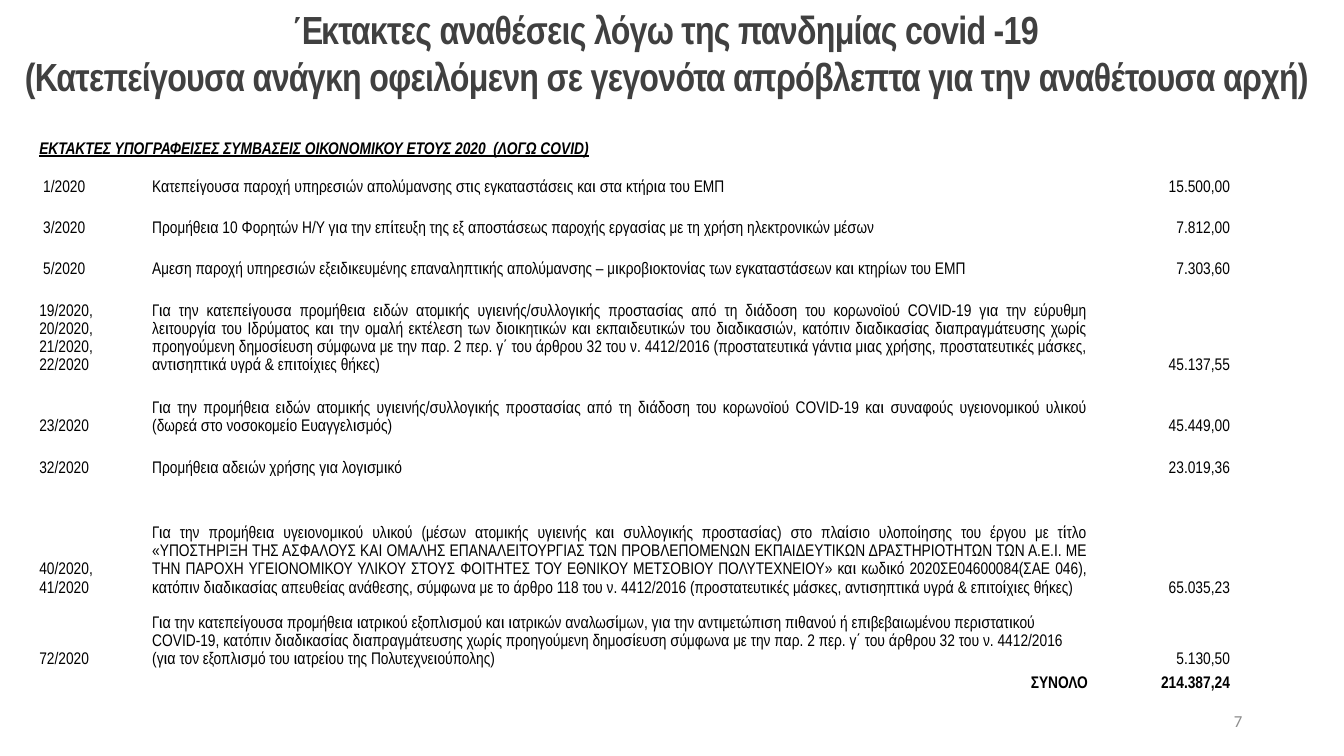
from pptx import Presentation
from pptx.dml.color import RGBColor
from pptx.enum.text import MSO_ANCHOR, PP_ALIGN
from pptx.util import Inches, Pt

LEFT, RIGHT, MID, JUST = PP_ALIGN.LEFT, PP_ALIGN.RIGHT, PP_ALIGN.CENTER, PP_ALIGN.JUSTIFY
WIDTHS = [1.12, 1.74, 7.56, 1.41]
HEIGHTS = [0.61, 0.24, 0.41, 0.41, 0.95, 0.61, 0.41, 1.19, 0.71, 0.24]
TITLE = [
    "Έκτακτες αναθέσεις λόγω της πανδημίας covid -19",
    "(Κατεπείγουσα ανάγκη οφειλόμενη σε γεγονότα απρόβλεπτα για την αναθέτουσα αρχή)",
]
HEADING = "EKTAKTEΣ ΥΠΟΓΡΑΦΕΙΣΕΣ ΣΥΜΒΑΣΕΙΣ ΟΙΚΟΝΟΜΙΚΟΥ ΕΤΟΥΣ 2020  (ΛΟΓΩ COVID)"
# Contract numbers, subject, alignment of the subject, amount
DEALS = [
    (" 1/2020",
     "Κατεπείγουσα παροχή υπηρεσιών απολύμανσης στις εγκαταστάσεις και στα κτήρια του ΕΜΠ",
     JUST, "15.500,00"),
    (" 3/2020",
     "Προμήθεια 10 Φορητών Η/Υ για την επίτευξη της εξ αποστάσεως παροχής εργασίας "
     "με τη χρήση ηλεκτρονικών μέσων",
     JUST, "7.812,00"),
    (" 5/2020",
     "Αμεση παροχή υπηρεσιών εξειδικευμένης επαναληπτικής απολύμανσης – μικροβιοκτονίας "
     "των εγκαταστάσεων και κτηρίων του ΕΜΠ",
     JUST, "7.303,60"),
    ("19/2020,\n20/2020,\n21/2020,\n22/2020",
     "Για την κατεπείγουσα προμήθεια ειδών ατομικής υγιεινής/συλλογικής προστασίας από τη "
     "διάδοση του κορωνοϊού COVID-19 για την εύρυθμη λειτουργία του Ιδρύματος και την ομαλή "
     "εκτέλεση των διοικητικών και εκπαιδευτικών του διαδικασιών, κατόπιν διαδικασίας "
     "διαπραγμάτευσης χωρίς προηγούμενη δημοσίευση σύμφωνα με την παρ. 2 περ. γ΄ του άρθρου "
     "32 του ν. 4412/2016 (προστατευτικά γάντια μιας χρήσης, προστατευτικές μάσκες, "
     "αντισηπτικά υγρά & επιτοίχιες θήκες)",
     JUST, "45.137,55"),
    ("23/2020",
     "Για την προμήθεια ειδών ατομικής υγιεινής/συλλογικής προστασίας από τη διάδοση του "
     "κορωνοϊού COVID-19 και συναφούς υγειονομικού υλικού (δωρεά στο νοσοκομείο Ευαγγελισμός)",
     JUST, "45.449,00"),
    ("32/2020", "Προμήθεια αδειών χρήσης για λογισμικό", LEFT, "23.019,36"),
    ("40/2020,\n41/2020",
     "Για την προμήθεια υγειονομικού υλικού (μέσων ατομικής υγιεινής και συλλογικής "
     "προστασίας) στο πλαίσιο υλοποίησης του έργου με τίτλο «ΥΠΟΣΤΗΡΙΞΗ ΤΗΣ ΑΣΦΑΛΟΥΣ ΚΑΙ "
     "ΟΜΑΛΗΣ ΕΠΑΝΑΛΕΙΤΟΥΡΓΙΑΣ ΤΩΝ ΠΡΟΒΛΕΠΟΜΕΝΩΝ ΕΚΠΑΙΔΕΥΤΙΚΩΝ ΔΡΑΣΤΗΡΙΟΤΗΤΩΝ ΤΩΝ Α.Ε.Ι. "
     "ΜΕ ΤΗΝ ΠΑΡΟΧΗ ΥΓΕΙΟΝΟΜΙΚΟΥ ΥΛΙΚΟΥ ΣΤΟΥΣ ΦΟΙΤΗΤΕΣ ΤΟΥ EΘΝΙΚΟΥ ΜΕΤΣΟΒΙΟΥ "
     "ΠΟΛΥΤΕΧΝΕΙΟΥ» και κωδικό 2020ΣΕ04600084(ΣΑΕ 046), κατόπιν διαδικασίας απευθείας "
     "ανάθεσης, σύμφωνα με το άρθρο 118 του ν. 4412/2016 (προστατευτικές μάσκες, "
     "αντισηπτικά υγρά & επιτοίχιες θήκες)",
     JUST, "65.035,23"),
    ("72/2020",
     "Για την κατεπείγουσα προμήθεια ιατρικού εξοπλισμού και ιατρικών αναλωσίμων, για την "
     "αντιμετώπιση πιθανού ή επιβεβαιωμένου περιστατικού COVID-19, κατόπιν διαδικασίας "
     "διαπραγμάτευσης χωρίς προηγούμενη δημοσίευση σύμφωνα με την παρ. 2 περ. γ΄ του άρθρου "
     "32 του ν. 4412/2016 (για τον εξοπλισμό του ιατρείου της Πολυτεχνειούπολης)",
     LEFT, "5.130,50"),
]


def color(code):
    return RGBColor.from_string(code)


def style(para, size, code, align, face="Arial Narrow", bold=False):
    para.alignment = align
    font = para.font
    font.name, font.size, font.bold = face, Pt(size), bold
    font.color.rgb = color(code)


def add_text(slide, lines, box, anchor, *look):
    frame = slide.shapes.add_textbox(*map(Inches, box)).text_frame
    frame.word_wrap = True
    frame.vertical_anchor = anchor
    frame.text = "\n".join(lines)
    for para in frame.paragraphs:
        style(para, *look)
    return frame


def add_title(slide):
    frame = add_text(slide, TITLE, (0, 0, 13.22, 1.11), MSO_ANCHOR.TOP,
                     28, "404040", MID, "Arial Narrow", True)
    for para in frame.paragraphs:
        for run in para.runs:
            run.font._element.set("spc", "-50")


def fill_cell(cell, text, align=LEFT, bold=False):
    cell.text = text
    cell.vertical_anchor = MSO_ANCHOR.BOTTOM
    cell.margin_left = cell.margin_right = cell.margin_top = Inches(0.01)
    cell.margin_bottom = 0
    for para in cell.text_frame.paragraphs:
        style(para, 12, "000000", align, bold=bold)
        para.line_spacing = 1.15


def add_deals(slide):
    frame = slide.shapes.add_table(
        len(HEIGHTS), len(WIDTHS), Inches(0.38), Inches(1.09),
        Inches(sum(WIDTHS)), Inches(sum(HEIGHTS)))
    table = frame.table
    table.first_row = table.horz_banding = False
    for col, width in zip(table.columns, WIDTHS):
        col.width = Inches(width)
    for row, height in zip(table.rows, HEIGHTS):
        row.height = Inches(height)
    for cell in table.iter_cells():
        cell.fill.solid()
        cell.fill.fore_color.rgb = color("FFFFFF")
        fill_cell(cell, "")

    head = table.cell(0, 0)
    head.merge(table.cell(0, 3))
    fill_cell(head, HEADING, bold=True)
    head.vertical_anchor = MSO_ANCHOR.MIDDLE
    head.margin_top = Inches(0.17)
    font = head.text_frame.paragraphs[0].font
    font.italic = font.underline = True

    for row, (number, subject, align, amount) in enumerate(DEALS, 1):
        table.cell(row, 1).merge(table.cell(row, 2))
        fill_cell(table.cell(row, 0), number)
        fill_cell(table.cell(row, 1), subject, align)
        fill_cell(table.cell(row, 3), amount, RIGHT)

    last = len(HEIGHTS) - 1
    fill_cell(table.cell(last, 2), "ΣΥΝΟΛΟ", RIGHT, True)
    fill_cell(table.cell(last, 3), "214.387,24", RIGHT, True)


def main():
    deck = Presentation()
    deck.slide_width, deck.slide_height = Inches(13.33), Inches(7.5)
    slide = deck.slides.add_slide(deck.slide_layouts[6])
    add_title(slide)
    add_deals(slide)
    add_text(slide, ["7"], (9.42, 6.95, 3, 0.4), MSO_ANCHOR.MIDDLE,
             12, "8C8C8C", RIGHT, "Calibri")
    deck.save("out.pptx")


if __name__ == "__main__":
    main()
